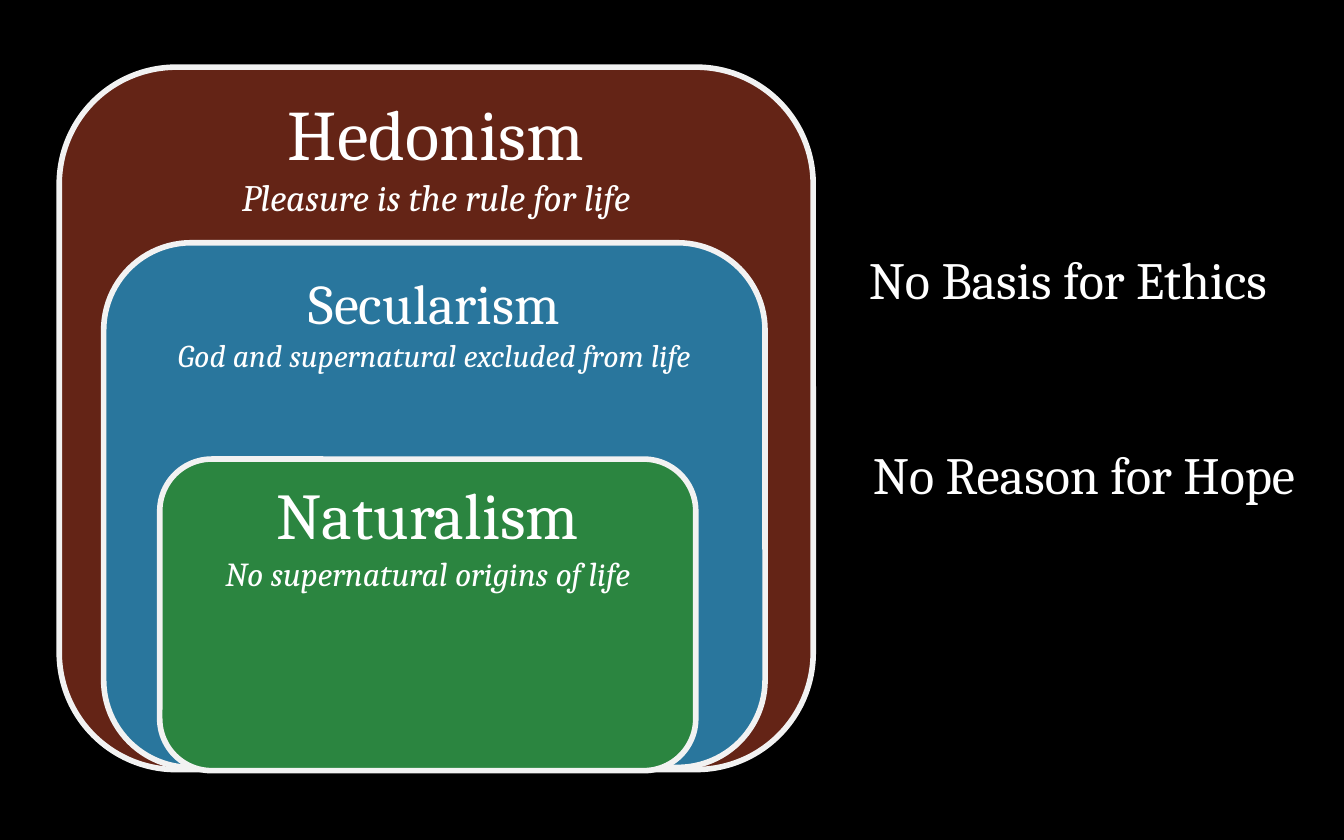
from pptx import Presentation
from pptx.dml.color import RGBColor
from pptx.enum.shapes import MSO_SHAPE as Shape
from pptx.enum.text import MSO_ANCHOR as Anchor, PP_ALIGN as Align
from pptx.util import Cm, Pt

FONT = "Cambria"
COLORS = {
    "background": "000000",
    "text": "FFFFFF",
    "outline": "F2F2F2",
    "hedonism": "642416",
    "secularism": "29769D",
    "naturalism": "2B8540",
}


def color(name):
    return RGBColor.from_string(COLORS[name])


def add_span(para, text, size, italic=False):
    para.alignment = Align.CENTER
    span = para.add_run()
    span.text = text
    span.font.name = FONT
    span.font.size = Pt(size)
    span.font.italic = italic
    span.font.color.rgb = color("text")


def add_layer(page, box, fill, title, title_size, belief, belief_size, top_inset):
    """One nested worldview: a rounded box headed by its name and belief."""
    layer = page.shapes.add_shape(Shape.ROUNDED_RECTANGLE, *map(Cm, box))
    layer.shadow.inherit = False
    layer.fill.solid()
    layer.fill.fore_color.rgb = color(fill)
    layer.line.color.rgb = color("outline")
    layer.line.width = Pt(3)

    frame = layer.text_frame
    frame.word_wrap = True
    frame.vertical_anchor = Anchor.TOP
    frame.margin_top = Cm(top_inset)
    add_span(frame.paragraphs[0], title, title_size)
    add_span(frame.add_paragraph(), belief, belief_size, italic=True)


def add_consequence(page, box, text):
    """A statement beside the nested layers."""
    label = page.shapes.add_textbox(*map(Cm, box))
    label.text_frame.word_wrap = True
    add_span(label.text_frame.paragraphs[0], text, 28)


def main():
    deck = Presentation()
    deck.slide_width, deck.slide_height = Cm(25.4), Cm(15.88)
    page = deck.slides.add_slide(deck.slide_layouts[6])
    page.background.fill.solid()
    page.background.fill.fore_color.rgb = color("background")

    # Nested layers, outermost first
    add_layer(page, (1.12, 1.27, 14.25, 13.28), "hedonism",
              "Hedonism", 38, "Pleasure is the rule for life", 20, -0.23)
    add_layer(page, (1.96, 4.59, 12.5, 9.92), "secularism",
              "Secularism", 30, "God and supernatural excluded from life", 17, 0)
    add_layer(page, (3.02, 8.68, 10.13, 5.89), "naturalism",
              "Naturalism", 35, "No supernatural origins of life", 18, 0)

    # Consequences
    add_consequence(page, (15.67, 4.55, 9.02, 1.45), "No Basis for Ethics")
    add_consequence(page, (15.67, 8.23, 9.63, 1.45), "No Reason for Hope")

    deck.save("out.pptx")


if __name__ == "__main__":
    main()
